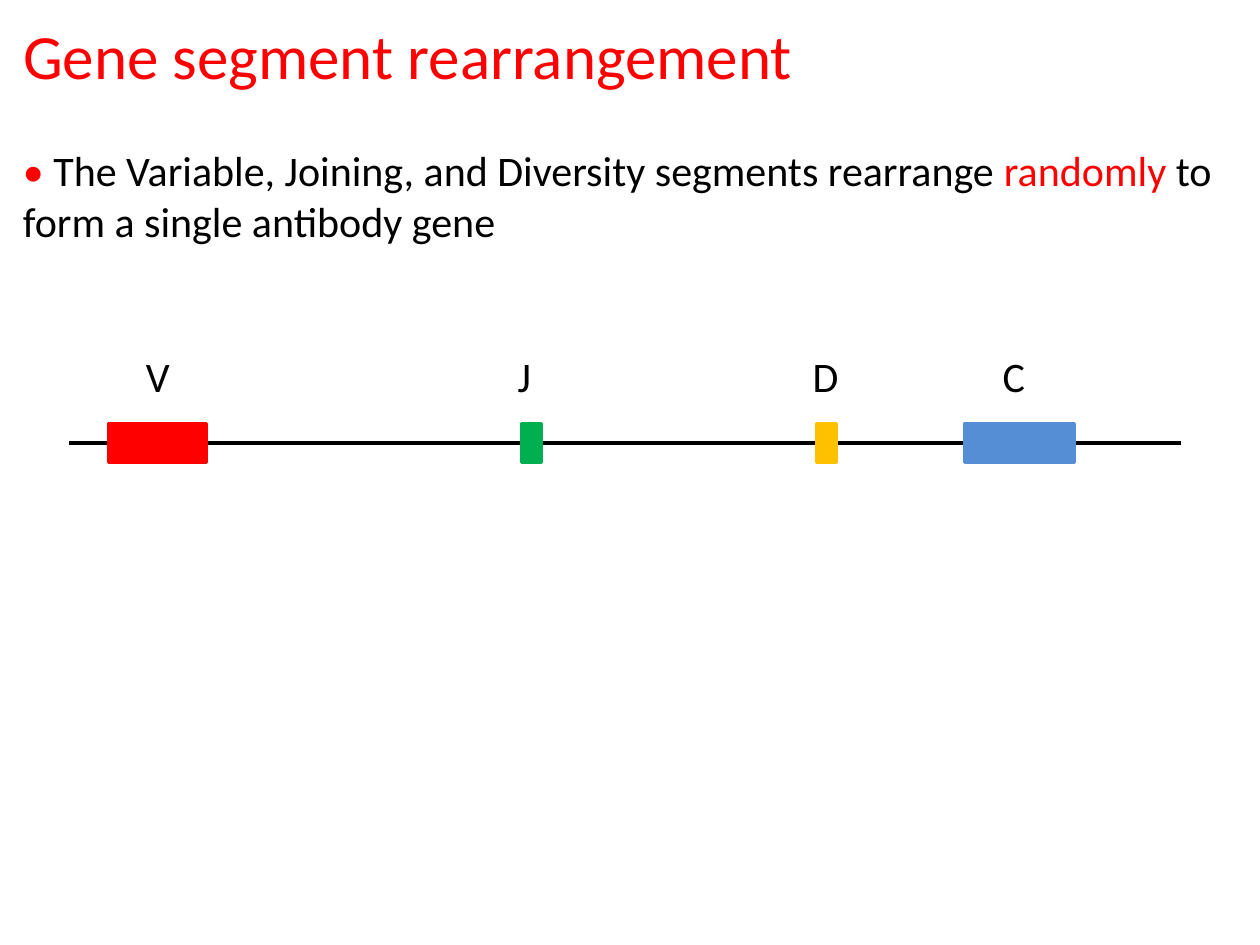
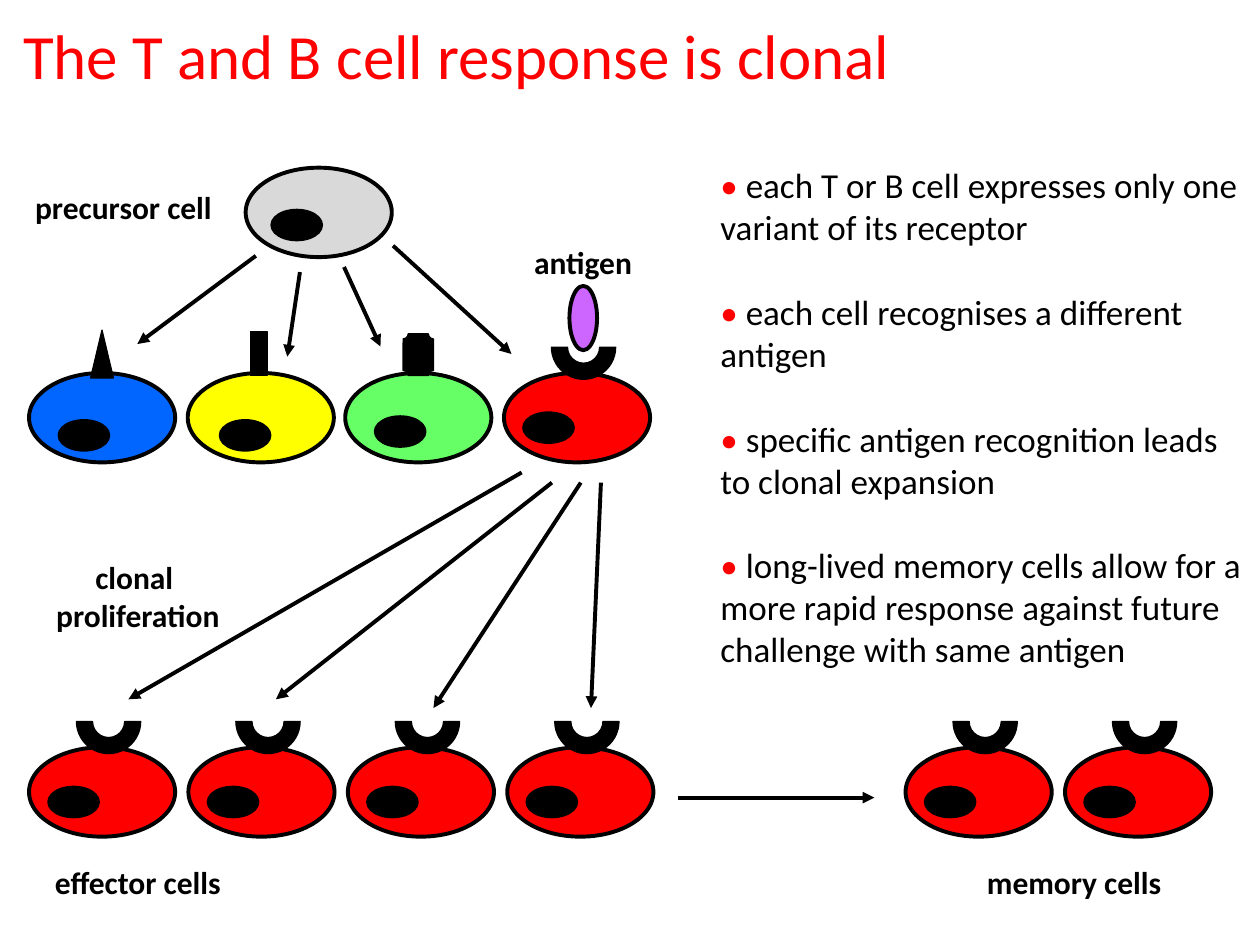
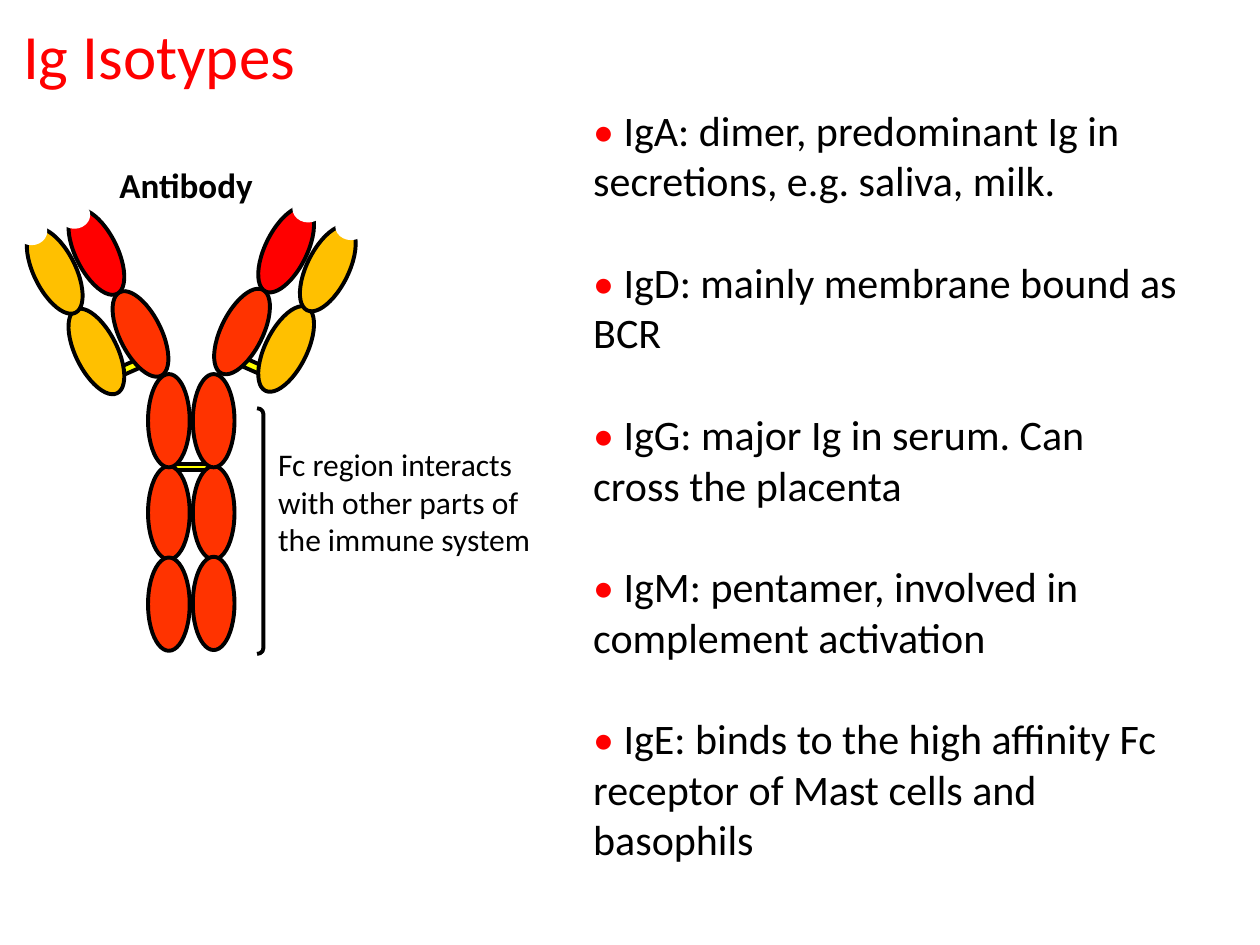
"""Build three immunology slides: gene rearrangement, clonal response and Ig isotypes."""
from dataclasses import dataclass

from lxml.etree import SubElement
from pptx import Presentation
from pptx.dml.color import RGBColor
from pptx.enum.shapes import MSO_CONNECTOR, MSO_SHAPE
from pptx.enum.text import MSO_ANCHOR, MSO_AUTO_SIZE, PP_ALIGN
from pptx.oxml.ns import qn
from pptx.util import Pt


@dataclass(frozen=True)
class Theme:
    font: str = "Calibri"
    ink: str = "000000"
    accent: str = "FF0000"
    paper: str = "FFFFFF"
    green: str = "00B050"
    gold: str = "FFC000"
    blue: str = "558ED5"
    grey: str = "D9D9D9"
    cell_blue: str = "0066FF"
    cell_yellow: str = "FFFF00"
    cell_green: str = "66FF66"
    antigen: str = "CC66FF"
    heavy_chain: str = "FF3300"
    title: int = 36
    large: int = 24
    medium: int = 20
    small: int = 18
    line_height: float = 1.22
    outline: float = 2.25
    thin: float = 0.75
    dot: float = 2


THEME = Theme()
TITLE_AREA = (6, 6, 714, 51)

GENE = {
    "title": "Gene segment rearrangement",
    "bullets": [[("The Variable, Joining, and Diversity segments rearrange ", THEME.ink),
                 ("randomly", THEME.accent),
                 (" to form a single antibody gene", THEME.ink)]],
    "strands": [(39.6, 200.9), (196.6, 364.3), (357.1, 674.6)],
    "segments": [
        ("V", 76.3, 61.9, 56.2, THEME.accent),
        ("J", 288.7, 298.1, 11.5, THEME.green),
        ("D", 457.2, 466.6, 11.5, THEME.gold),
        ("C", 565.9, 551.5, 62.6, THEME.blue),
    ],
}

CLONAL = {
    "title": "The T and B cell response is clonal",
    "bullets": [
        "each T or B cell expresses only one variant of its receptor",
        "each cell recognises a different antigen",
        "specific antigen recognition leads to clonal expansion",
        "long-lived memory cells allow for a more rapid response against "
        "future challenge with same antigen",
    ],
    "labels": [
        (["precursor cell"], 70.6, 103.7, 129),
        (["clonal ", "proliferation"], 78.8, 315.4, 145),
        (["effector cells"], 78.8, 489.6, 145),
        (["memory cells"], 613.8, 489.6, 190),
    ],
    "naive_cells": [
        (16.6, 213.1, THEME.cell_blue, (17.3, 27.4)),
        (107.3, 213.1, THEME.cell_yellow, (18.7, 27.4)),
        (197.3, 213.1, THEME.cell_green, (17.3, 25.2)),
        (140.4, 95.8, THEME.grey, (15.1, 24.5)),
    ],
    "receptors": [
        (MSO_SHAPE.RECTANGLE, (143.3, 189.4, 9.4, 25.2)),
        (MSO_SHAPE.ISOSCELES_TRIANGLE, (51.8, 188.6, 13, 27.4)),
        (MSO_SHAPE.PLAQUE, (230.4, 190.8, 17.3, 23.8)),
    ],
    "effectors": (16.6, 4),
    "memory": (517.5, 2),
    "arrows": [
        (146.2, 146.2, 78.5, 196.6), (171.4, 155.5, 164.2, 203.8),
        (196.6, 152.6, 217.4, 198), (224.6, 140.4, 292.3, 202.3),
        (298.1, 270, 73.4, 399.6), (315.4, 275.8, 157.7, 399.6),
        (331.9, 275.8, 247.7, 404.6), (343.4, 275.8, 337.7, 404.6),
        (387.4, 455.8, 499.7, 455.8),
    ],
}

ISOTYPES = {
    "title": "Ig Isotypes",
    "bullets": [
        "IgA: dimer, predominant Ig in secretions, e.g. saliva, milk.",
        "IgD: mainly membrane bound as BCR",
        "IgG: major Ig in serum. Can cross the placenta",
        "IgM: pentamer, involved in complement activation",
        "IgE: binds to the high affinity Fc receptor of Mast cells and basophils",
    ],
    "antibody": "Antibody",
    "region": "Fc region interacts with other parts of the immune system",
    "domains": [
        (84.6, 266.4, 0, 0, THEME.heavy_chain),
        (84.6, 213.8, 0, 0, THEME.heavy_chain),
        (68.4, 164.2, -26.4, 1.4, THEME.heavy_chain),
        (43.2, 174.2, -26.4, 1.4, THEME.gold),
        (19.4, 128.2, -26.4, 1.4, THEME.gold),
        (43.2, 117.4, -26.4, 1.4, THEME.accent),
        (84.6, 318.6, 0, 0.4, THEME.heavy_chain),
    ],
    "binding_sites": [(10.1, 125.3, 2.9), (34.6, 115.9, 3.6)],
}

CELL_SIZE = (83.5, 51.1)
NUCLEUS_SIZE = (28.1, 16.6)
CLONE_PITCH = 91.1
DOMAIN_SIZE = (23.8, 53.3)
ANTIBODY_AXIS = 109.3


def points(values):
    return [Pt(value) for value in values]


def apply(target, formats):
    for key, value in formats.items():
        setattr(target, key, value)


def write(frame, paragraphs, size, bold=False, align=PP_ALIGN.LEFT, gap=0):
    """Fill a text frame from paragraphs, each a list of (text, colour) runs."""
    apply(frame, {"word_wrap": True, "auto_size": MSO_AUTO_SIZE.NONE,
                  "vertical_anchor": MSO_ANCHOR.TOP})
    for index, runs in enumerate(paragraphs):
        paragraph = frame.add_paragraph() if index else frame.paragraphs[0]
        apply(paragraph, {"alignment": align, "space_before": Pt(gap if index else 0)})
        for text, colour in runs:
            run = paragraph.add_run()
            run.text = text
            apply(run.font, {"name": THEME.font, "size": Pt(size), "bold": bold})
            run.font.color.rgb = RGBColor.from_string(colour)


def add_text(slide, area, lines, size, **formats):
    frame = slide.shapes.add_textbox(*points(area)).text_frame
    write(frame, [[(line, THEME.ink)] for line in lines], size, **formats)


def add_bullets(slide, area, items, size):
    paragraphs = [[("•", THEME.accent), (" ", THEME.ink)]
                  + (item if isinstance(item, list) else [(item, THEME.ink)])
                  for item in items]
    frame = slide.shapes.add_textbox(*points(area)).text_frame
    write(frame, paragraphs, size, gap=size * THEME.line_height)


def add_part(slide, kind, area, fill, line=THEME.ink, width=THEME.outline, rotation=0):
    part = slide.shapes.add_shape(kind, *points(area))
    part.shadow.inherit = False
    part.rotation = rotation
    if fill:
        part.fill.solid()
        part.fill.fore_color.rgb = RGBColor.from_string(fill)
    else:
        part.fill.background()
    part.line.color.rgb = RGBColor.from_string(line)
    part.line.width = Pt(width)
    return part


def add_line(slide, ends, arrow=False):
    connector = slide.shapes.add_connector(MSO_CONNECTOR.STRAIGHT, *points(ends))
    connector.line.color.rgb = RGBColor.from_string(THEME.ink)
    connector.line.width = Pt(THEME.outline)
    properties = connector._element.spPr
    if arrow:
        SubElement(properties.find(qn("a:ln")), qn("a:tailEnd"), type="triangle")
    SubElement(properties, qn("a:effectLst"))


def add_cell(slide, left, top, fill, nucleus):
    add_part(slide, MSO_SHAPE.OVAL, (left, top, *CELL_SIZE), fill)
    add_part(slide, MSO_SHAPE.OVAL, (left + nucleus[0], top + nucleus[1], *NUCLEUS_SIZE),
             THEME.ink, width=THEME.dot)


def add_clone(slide, left, top):
    add_cell(slide, left, top, THEME.accent, (11.4, 23))
    add_part(slide, MSO_SHAPE.BLOCK_ARC, (left + 27.1, top - 33.1, 36.7, 36.7),
             THEME.ink, width=THEME.thin, rotation=180)


def add_titled_slide(deck, title):
    slide = deck.slides.add_slide(deck.slide_layouts[5])
    heading = slide.shapes.title
    apply(heading, dict(zip(("left", "top", "width", "height"), points(TITLE_AREA))))
    write(heading.text_frame, [[(title, THEME.accent)]], THEME.title)
    return slide


def build_gene(deck):
    slide = add_titled_slide(deck, GENE["title"])
    add_bullets(slide, (6, 79.3, 714, 66), GENE["bullets"], THEME.large)
    for start, end in GENE["strands"]:
        add_line(slide, (start, 253.2, end, 253.2))
    for name, label_left, left, width, colour in GENE["segments"]:
        add_part(slide, MSO_SHAPE.RECTANGLE, (left, 241.9, width, 22.3),
                 colour, colour, THEME.dot)
        add_text(slide, (label_left, 196.6, 32, 36), [name], THEME.large)


def build_clonal(deck):
    slide = add_titled_slide(deck, CLONAL["title"])
    for cell in CLONAL["naive_cells"]:
        add_cell(slide, *cell)
    for kind, area in CLONAL["receptors"]:
        add_part(slide, kind, area, THEME.ink, width=THEME.thin)
    add_part(slide, MSO_SHAPE.OVAL, (325.4, 163.4, 15.8, 36.7), THEME.antigen)
    add_clone(slide, 288, 213.1)
    for first, count in (CLONAL["effectors"], CLONAL["memory"]):
        for index in range(count):
            add_clone(slide, first + index * CLONE_PITCH, 427)
    for ends in CLONAL["arrows"]:
        add_line(slide, ends, arrow=True)
    for lines, centre, top, width in CLONAL["labels"]:
        add_text(slide, (centre - width / 2, top, width, 28 * len(lines)), lines,
                 THEME.small, bold=True, align=PP_ALIGN.CENTER)
    add_text(slide, (298.1, 135.4, 95.8, 28), ["antigen"], THEME.small, bold=True)
    add_bullets(slide, (404.6, 90, 315.4, 309.6), CLONAL["bullets"], THEME.medium)


def add_mirrored(slide, kind, area, side, rise, fill, rotation=0, line=THEME.ink):
    """Draw an antibody part on the left (0) or reflected to the right (1)."""
    left, top, width, height = area
    if side:
        left, top, rotation = 2 * ANTIBODY_AXIS - left - width, top - rise, -rotation
    add_part(slide, kind, (left, top, width, height), fill, line, rotation=rotation)


def build_isotypes(deck):
    slide = add_titled_slide(deck, ISOTYPES["title"])
    add_part(slide, MSO_SHAPE.RECTANGLE, (95.8, 265, 27.4, 3.6), THEME.cell_yellow)
    for side in range(2):
        add_mirrored(slide, MSO_SHAPE.RECTANGLE, (66.2, 206.6, 20.2, 5), side, 0.7,
                     THEME.cell_yellow, -23.8)
        for left, top, tilt, rise, colour in ISOTYPES["domains"]:
            add_mirrored(slide, MSO_SHAPE.OVAL, (left, top, *DOMAIN_SIZE), side, rise,
                         colour, tilt)
        for left, top, rise in ISOTYPES["binding_sites"]:
            add_mirrored(slide, MSO_SHAPE.OVAL, (left, top, 15.8, 13.7), side, rise,
                         THEME.paper, line=THEME.paper)
    add_text(slide, (61.2, 90, 91.4, 28), [ISOTYPES["antibody"]], THEME.medium, bold=True)
    add_text(slide, (151.9, 250.6, 168.5, 74), [ISOTYPES["region"]], THEME.small)
    bracket = add_part(slide, MSO_SHAPE.RIGHT_BRACKET, (146.9, 233.3, 3.6, 140.4), None)
    bracket.adjustments[0] = 0.9
    add_bullets(slide, (331.9, 56.2, 348.5, 440), ISOTYPES["bullets"], THEME.large)


def main():
    deck = Presentation()
    deck.slide_width, deck.slide_height = points((720, 540))
    for build in (build_gene, build_clonal, build_isotypes):
        build(deck)
    deck.save("out.pptx")


if __name__ == "__main__":
    main()
